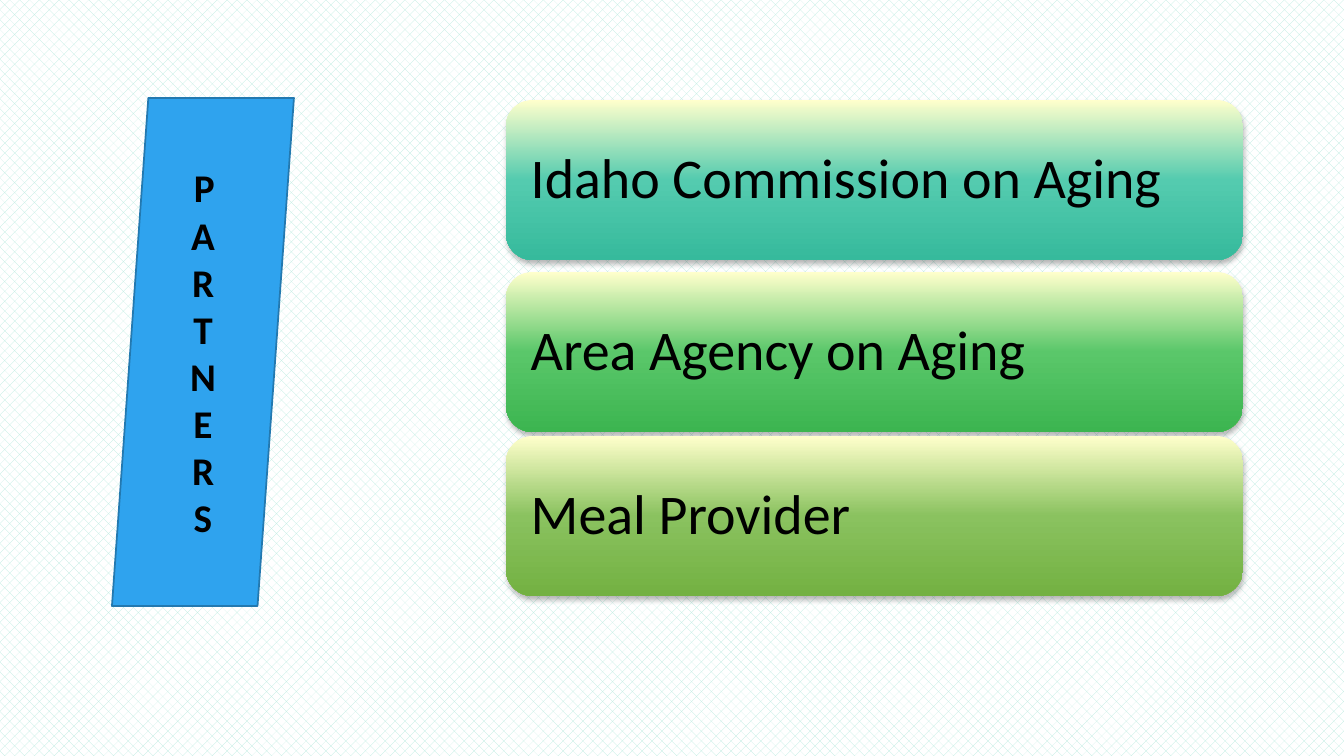
from copy import deepcopy
from lxml.etree import SubElement
from pptx import Presentation
from pptx.dml.color import RGBColor
from pptx.enum.dml import MSO_PATTERN
from pptx.enum.shapes import MSO_SHAPE
from pptx.enum.text import MSO_ANCHOR, PP_ALIGN
from pptx.oxml.ns import qn
from pptx.util import Pt

# Content: text, top, middle and bottom gradient colours
TITLE = "PARTNERS"
PARTNERS = [
    ("Idaho Commission on Aging", 100, "54CBAF", "36BA9C"),
    ("Area Agency on Aging", 272, "5AC76A", "3CB550"),
    ("Meal Provider", 436, "8AC25F", "73B142"),
]
CARD_LEFT, CARD_W, CARD_H, CARD_INSET = 506, 737, 160, 17
BANNER = (112, 98, 182, 508)
CARD_TOP_COLOR = "FFFFCC"


def px(n):
    return round(n * 914400 / 100.8)


def rgb(value):
    return RGBColor.from_string(value)


def add_shape(s, kind, box, text, align, **font):
    sp = s.shapes.add_shape(kind, *map(px, box))
    sp.shadow.inherit = False
    tf = sp.text_frame
    tf.word_wrap = True
    tf.vertical_anchor = MSO_ANCHOR.MIDDLE
    p = tf.paragraphs[0]
    p.alignment = align
    r = p.add_run()
    r.text = text
    r.font.color.rgb = rgb("000000")
    for name, value in {"name": "Calibri", **font}.items():
        setattr(r.font, name, value)
    return sp


def fill_gradient(sp, colors):
    sp.fill.gradient()
    sp.fill.gradient_angle = 270
    stops = sp._element.spPr.find(".//" + qn("a:gsLst"))
    stops.append(deepcopy(stops[0]))
    for i, (stop, color) in enumerate(zip(sp.fill.gradient_stops, colors)):
        stop.position = i / (len(colors) - 1)
        stop.color.rgb = rgb(color)


def add_shadow(sp):
    effects = sp._element.spPr.find(qn("a:effectLst"))
    shadow = SubElement(effects, qn("a:outerShdw"), blurRad=str(Pt(4)),
                        dist=str(Pt(2)), dir="5400000", rotWithShape="0")
    color = SubElement(shadow, qn("a:srgbClr"), val="000000")
    SubElement(color, qn("a:alpha"), val="28000")


prs = Presentation()
prs.slide_width, prs.slide_height = px(1344), px(756)
s = prs.slides.add_slide(prs.slide_layouts[6])

# Patterned background
bg = s.background.fill
bg.patterned()
bg.pattern = MSO_PATTERN.PERCENT_30
bg.fore_color.rgb = rgb("B7EADE")
bg.back_color.rgb = rgb("FFFFFF")

# Partner cards
for text, top, middle, bottom in PARTNERS:
    card = add_shape(s, MSO_SHAPE.ROUNDED_RECTANGLE,
                     (CARD_LEFT, top, CARD_W, CARD_H),
                     text, PP_ALIGN.LEFT, size=Pt(40))
    fill_gradient(card, (CARD_TOP_COLOR, middle, bottom))
    card.line.fill.background()
    add_shadow(card)
    tf = card.text_frame
    tf.paragraphs[0].line_spacing = 0.9
    for side in ("left", "top", "right", "bottom"):
        setattr(tf, f"margin_{side}", px(CARD_INSET))

# Slanted banner with stacked letters
banner = add_shape(s, MSO_SHAPE.FLOWCHART_DATA, BANNER, TITLE,
                   PP_ALIGN.CENTER, size=Pt(28), bold=True)
banner.fill.solid()
banner.fill.fore_color.rgb = rgb("2FA3EE")
banner.line.color.rgb = rgb("2379B0")
banner.line.width = Pt(1.25)
banner.text_frame._txBody.bodyPr.set("vert", "wordArtVert")

prs.save("out.pptx")
